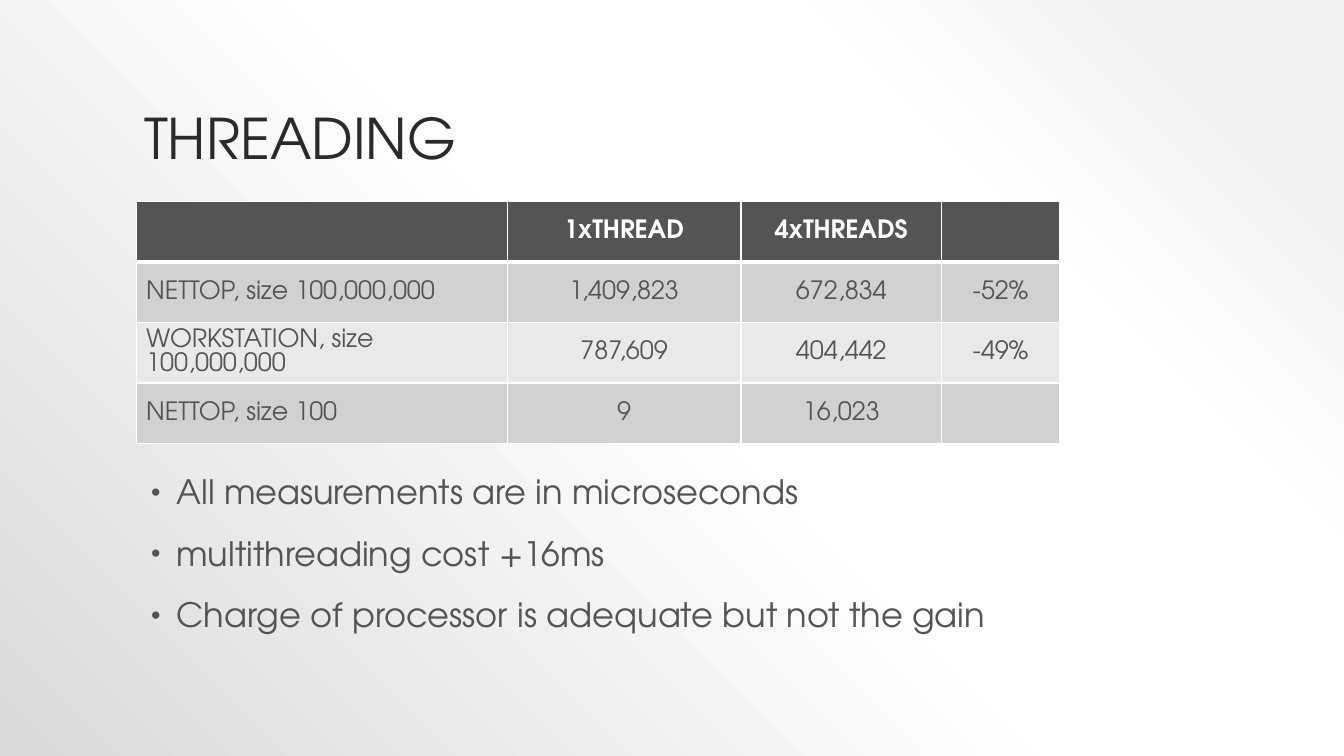
from pptx import Presentation
from pptx.dml.color import RGBColor
from pptx.enum.text import MSO_ANCHOR, MSO_AUTO_SIZE, PP_ALIGN
from pptx.oxml import parse_xml
from pptx.oxml.ns import nsdecls
from pptx.util import Inches, Pt

FONT = "TeX Gyre Adventor"
INK = RGBColor(0x2A, 0x2A, 0x2A)
GREY = RGBColor(0x54, 0x54, 0x54)
WHITE = RGBColor(0xFF, 0xFF, 0xFF)
BAND_DARK = RGBColor(0xD1, 0xD1, 0xD1)
BAND_LIGHT = RGBColor(0xE9, 0xE9, 0xE9)
BACKDROP_STOPS = [
    (10, RGBColor(0xF2, 0xF2, 0xF2)),
    (28, WHITE),
    (48, WHITE),
    (100, RGBColor(0xD9, 0xD9, 0xD9)),
]

COLUMN_WIDTHS = [3.68, 2.32, 1.99, 1.17]
ROW_HEIGHT = 0.6
TIMINGS = [
    ["", "1xTHREAD", "4xTHREADS", ""],
    ["NETTOP, size 100,000,000", "1,409,823", "672,834", "-52%"],
    ["WORKSTATION, size 100,000,000", "787,609", "404,442", "-49%"],
    ["NETTOP, size 100", "9", "16,023", ""],
]
REMARKS = [
    "All measurements are in microseconds",
    "multithreading cost +16ms",
    "Charge of processor is adequate but not the gain",
]


class SlideBuilder:
    """Holds the type style and the slide being filled."""

    def __init__(self, deck):
        self.slide = deck.slides.add_slide(deck.slide_layouts[1])

    def style(self, para, size, color, bold=False, align=PP_ALIGN.LEFT):
        para.alignment = align
        para.font.name = FONT
        para.font.size = Pt(size)
        para.font.color.rgb = color
        para.font.bold = bold

    def place(self, shape, left, top, width, height):
        shape.left, shape.top = Inches(left), Inches(top)
        shape.width, shape.height = Inches(width), Inches(height)

    def backdrop(self, stops):
        self.slide.background.fill.solid()
        properties = self.slide.element.xpath("./p:cSld/p:bg/p:bgPr")[0]
        stop_xml = "".join(
            f'<a:gs pos="{percent * 1000}"><a:srgbClr val="{color}"/></a:gs>'
            for percent, color in stops
        )
        gradient = parse_xml(
            f'<a:gradFill {nsdecls("a")} rotWithShape="1"><a:gsLst>{stop_xml}</a:gsLst>'
            '<a:path path="circle"><a:fillToRect l="100000" b="100000"/></a:path>'
            "</a:gradFill>"
        )
        properties.replace(properties[0], gradient)

    def title(self, text, *bounds):
        title = self.slide.shapes.title
        self.place(title, *bounds)
        frame = title.text_frame
        frame.text = text
        frame.vertical_anchor = MSO_ANCHOR.BOTTOM
        frame.auto_size = MSO_AUTO_SIZE.NONE
        self.style(frame.paragraphs[0], 40, INK)
        frame.paragraphs[0].line_spacing = 0.9

    def bullets(self, items, *bounds):
        body = self.slide.placeholders[1]
        self.place(body, *bounds)
        frame = body.text_frame
        frame.text = "\n".join(items)
        frame.auto_size = MSO_AUTO_SIZE.NONE
        for para in frame.paragraphs:
            self.style(para, 24, GREY)
            para.line_spacing = 0.9
            para.space_before = Pt(18)
            properties = para._p.get_or_add_pPr()
            properties.set("marL", str(Inches(0.3)))
            properties.set("indent", str(Inches(-0.25)))
            marks = (
                f'<a:buClr {nsdecls("a")}><a:srgbClr val="{GREY}"/></a:buClr>',
                f'<a:buSzPct {nsdecls("a")} val="80000"/>',
                f'<a:buFont {nsdecls("a")} typeface="Arial"/>',
                f'<a:buChar {nsdecls("a")} char="•"/>',
            )
            default_run = properties.find("{*}defRPr")
            for mark in marks:
                default_run.addprevious(parse_xml(mark))

    def borders(self, cell, bottom_width):
        properties = cell._tc.get_or_add_tcPr()
        widths = [("lnL", 1), ("lnR", 1), ("lnT", 1), ("lnB", bottom_width)]
        for position, (side, width) in enumerate(widths):
            line = parse_xml(
                f'<a:{side} {nsdecls("a")} w="{Pt(width)}"><a:solidFill>'
                f'<a:srgbClr val="{WHITE}"/></a:solidFill></a:{side}>'
            )
            properties.insert(position, line)

    def table(self, rows, left, top):
        frame = self.slide.shapes.add_table(
            len(rows), len(COLUMN_WIDTHS), Inches(left), Inches(top),
            Inches(sum(COLUMN_WIDTHS)), Inches(ROW_HEIGHT * len(rows)),
        )
        table = frame.table
        for column, width in zip(table.columns, COLUMN_WIDTHS):
            column.width = Inches(width)
        for row_index, texts in enumerate(rows):
            table.rows[row_index].height = Inches(ROW_HEIGHT)
            header = row_index == 0
            band = BAND_DARK if row_index % 2 else BAND_LIGHT
            for column_index, text in enumerate(texts):
                cell = table.cell(row_index, column_index)
                cell.text = text
                cell.vertical_anchor = MSO_ANCHOR.MIDDLE
                cell.margin_top = cell.margin_bottom = Inches(0.05)
                cell.fill.solid()
                cell.fill.fore_color.rgb = GREY if header else band
                self.borders(cell, 3 if header else 1)
                align = PP_ALIGN.CENTER if column_index else PP_ALIGN.LEFT
                para = cell.text_frame.paragraphs[0]
                self.style(para, 18, WHITE if header else GREY, header, align)


def main():
    deck = Presentation()
    deck.slide_width, deck.slide_height = Inches(13.33), Inches(7.5)
    page = SlideBuilder(deck)

    # Backdrop and heading
    page.backdrop(BACKDROP_STOPS)
    page.title("THREADING", 1.33, 0.3, 10.67, 1.45)

    # Timings by machine and thread count
    page.table(TIMINGS, 1.35, 2)

    # Remarks below the table
    page.bullets(REMARKS, 1.35, 4.67, 10.65, 2.08)

    deck.save("out.pptx")


if __name__ == "__main__":
    main()
